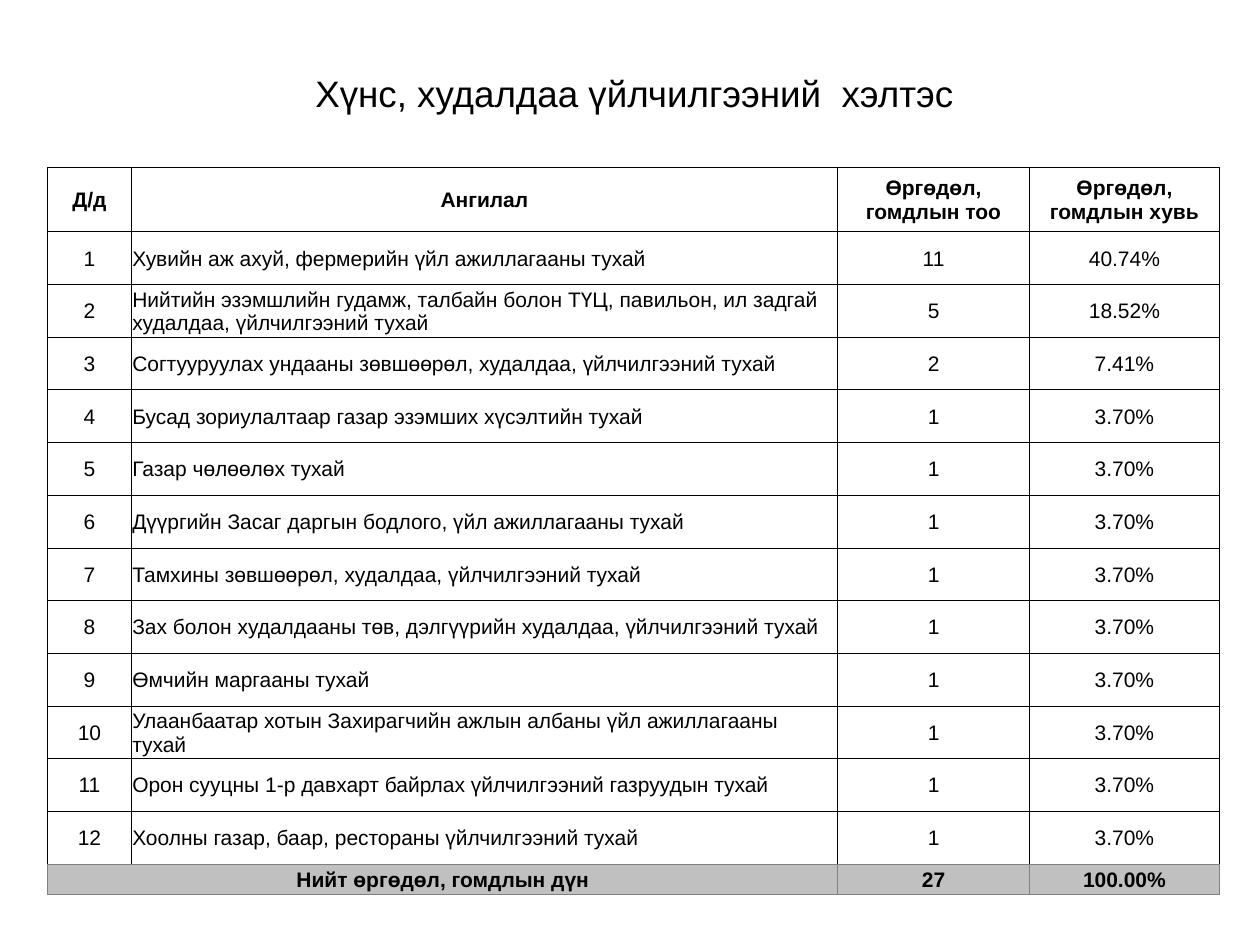
from lxml.etree import SubElement
from pptx import Presentation
from pptx.dml.color import RGBColor
from pptx.enum.text import MSO_ANCHOR as Anchor, PP_ALIGN as Align
from pptx.oxml.ns import qn
from pptx.util import Inches, Pt

BLACK = RGBColor(0x00, 0x00, 0x00)
WHITE = RGBColor(0xFF, 0xFF, 0xFF)
SILVER = RGBColor(0xC0, 0xC0, 0xC0)
GRAY = RGBColor(0x80, 0x80, 0x80)

HEADINGS = ["Д/д", "Ангилал", "Өргөдөл, гомдлын тоо", "Өргөдөл, гомдлын хувь"]
COMPLAINTS = [
    ("Хувийн аж ахуй, фермерийн үйл ажиллагааны тухай", 11),
    ("Нийтийн эзэмшлийн гудамж, талбайн болон ТҮЦ, павильон, ил задгай "
     "худалдаа, үйлчилгээний тухай", 5),
    ("Согтууруулах ундааны зөвшөөрөл, худалдаа, үйлчилгээний тухай", 2),
    ("Бусад зориулалтаар газар эзэмших хүсэлтийн тухай", 1),
    ("Газар чөлөөлөх тухай", 1),
    ("Дүүргийн Засаг даргын бодлого, үйл ажиллагааны тухай", 1),
    ("Тамхины зөвшөөрөл, худалдаа, үйлчилгээний тухай", 1),
    ("Зах болон худалдааны төв, дэлгүүрийн худалдаа, үйлчилгээний тухай", 1),
    ("Өмчийн маргааны тухай", 1),
    ("Улаанбаатар хотын Захирагчийн ажлын албаны үйл ажиллагааны тухай", 1),
    ("Орон сууцны 1-р давхарт байрлах үйлчилгээний газруудын тухай", 1),
    ("Хоолны газар, баар, рестораны үйлчилгээний тухай", 1),
]
COLUMN_WIDTHS = [0.66, 5.61, 1.52, 1.51]
TABLE_HEIGHT, HEADING_HEIGHT, TOTAL_HEIGHT = 5.77, 0.51, 0.24
CELL_FORMAT = {
    "vertical_anchor": Anchor.MIDDLE,
    "margin_left": Inches(0.01),
    "margin_right": Inches(0.01),
    "margin_top": Inches(0.01),
    "margin_bottom": 0,
}
TITLE_FORMAT = {
    "word_wrap": True,
    "vertical_anchor": Anchor.MIDDLE,
    "margin_left": Inches(0.32),
}


def write(paragraph, text, size, align, bold=False):
    paragraph.alignment = align
    run = paragraph.add_run()
    run.text = text
    font_format = {"name": "Arial", "size": Pt(size), "bold": bold}
    for name, value in font_format.items():
        setattr(run.font, name, value)
    run.font.color.rgb = BLACK


def add_border(cell, side, color):
    line = SubElement(cell._tc.get_or_add_tcPr(), qn(f"a:ln{side}"), w=str(Pt(0.5)))
    fill = SubElement(line, qn("a:solidFill"))
    SubElement(fill, qn("a:srgbClr"), val=str(color))


prs = Presentation()
prs.slide_width, prs.slide_height = Inches(10), Inches(7.5)
slide = prs.slides.add_slide(prs.slide_layouts[6])

# Title
title = slide.shapes.add_textbox(
    Inches(0.14), Inches(0.46), Inches(9.57), Inches(0.6)).text_frame
for name, value in TITLE_FORMAT.items():
    setattr(title, name, value)
title.paragraphs[0].line_spacing = 0.9
write(title.paragraphs[0], "Хүнс, худалдаа үйлчилгээний  хэлтэс", 21, Align.CENTER)

# Table contents: headings, numbered complaints with their share, total
total = sum(count for _, count in COMPLAINTS)
rows = [HEADINGS]
for number, (category, count) in enumerate(COMPLAINTS, 1):
    rows.append([str(number), category, str(count), f"{count / total:.2%}"])
rows.append(["Нийт өргөдөл, гомдлын дүн", "", str(total), f"{1:.2%}"])
last = len(rows) - 1

# Table grid
table = slide.shapes.add_table(
    len(rows), len(HEADINGS), Inches(0.38), Inches(1.33),
    Inches(sum(COLUMN_WIDTHS)), Inches(TABLE_HEIGHT)).table
for column, width in zip(table.columns, COLUMN_WIDTHS):
    column.width = Inches(width)
body_height = (TABLE_HEIGHT - HEADING_HEIGHT - TOTAL_HEIGHT) / len(COMPLAINTS)
heights = [HEADING_HEIGHT] + [body_height] * len(COMPLAINTS) + [TOTAL_HEIGHT]
for row, height in zip(table.rows, heights):
    row.height = Inches(height)
table.cell(last, 0).merge(table.cell(last, 1))

# Cells
for r, texts in enumerate(rows):
    for c, text in enumerate(texts):
        cell = table.cell(r, c)
        for name, value in CELL_FORMAT.items():
            setattr(cell, name, value)
        for side in "LRTB":
            beside_total = r == last or (r == last - 1 and side == "B")
            add_border(cell, side, GRAY if beside_total else BLACK)
        cell.fill.solid()
        cell.fill.fore_color.rgb = SILVER if r == last else WHITE
        if text:
            is_category = c == 1 and 0 < r < last
            write(cell.text_frame.paragraphs[0], text, 12,
                  Align.LEFT if is_category else Align.CENTER, r in (0, last))

prs.save("out.pptx")
